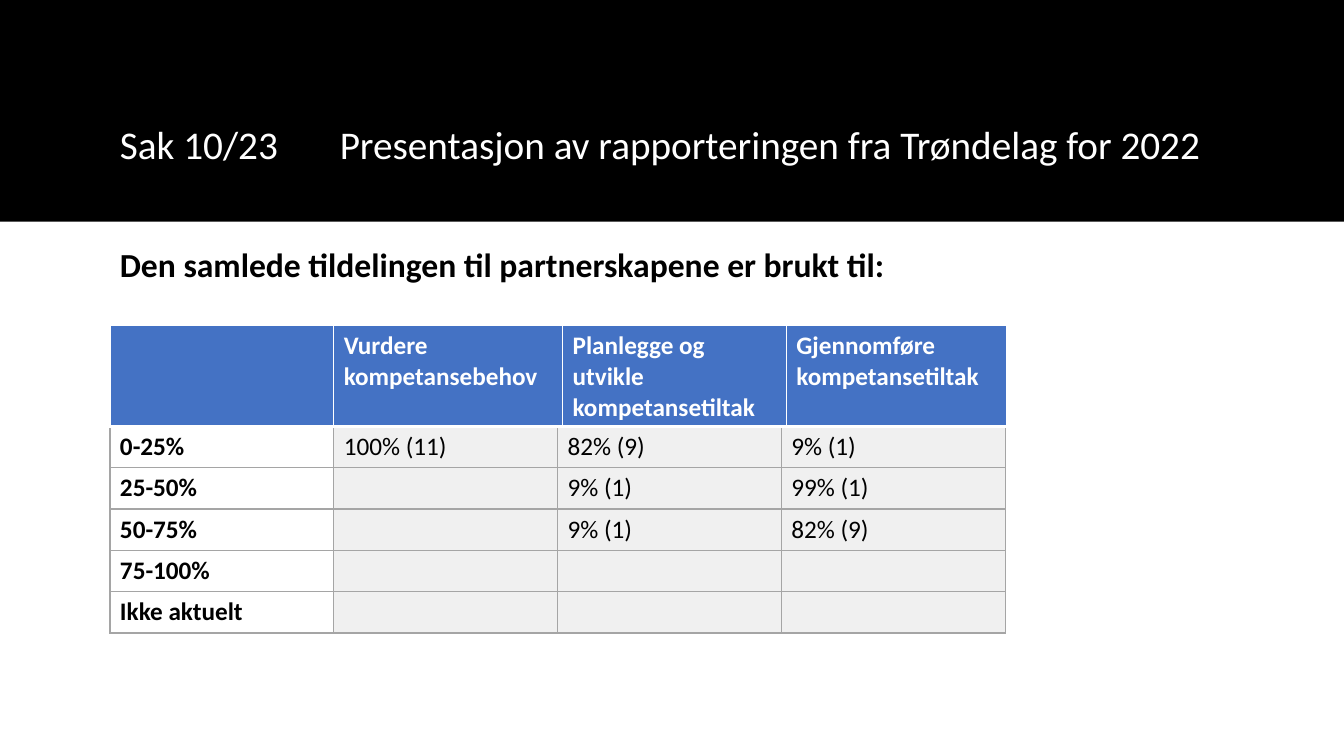
"""Build the slide on how the allocation to the partnerships was used."""
from lxml.etree import SubElement
from pptx import Presentation
from pptx.dml.color import RGBColor
from pptx.enum.shapes import MSO_SHAPE as Shape
from pptx.enum.text import MSO_ANCHOR as Anchor, PP_ALIGN as Align
from pptx.oxml.ns import qn
from pptx.util import Inches, Pt

BLACK = RGBColor(0x00, 0x00, 0x00)
WHITE = RGBColor(0xFF, 0xFF, 0xFF)
BLUE = RGBColor(0x44, 0x72, 0xC4)
PALE = RGBColor(0xF0, 0xF0, 0xF0)
GREY = RGBColor(0xA5, 0xA5, 0xA5)
LEFT = 1.09
ROW_HEIGHT = 0.41


def write(text_frame, text, size, color, bold=False):
    text_frame.text = text
    text_frame.word_wrap = True
    paragraph = text_frame.paragraphs[0]
    paragraph.alignment = Align.LEFT
    font_format = {"name": "Calibri", "size": Pt(size), "bold": bold}
    for run in paragraph.runs:
        for name, value in font_format.items():
            setattr(run.font, name, value)
        run.font.color.rgb = color
    return paragraph


def format_cell(cell, fill, line_color, line_widths):
    properties = cell._tc.get_or_add_tcPr()
    for side, width in zip("LRTB", line_widths):
        line = SubElement(properties, qn(f"a:ln{side}"), w=str(Pt(width)))
        line_fill = SubElement(line, qn("a:solidFill"))
        SubElement(line_fill, qn("a:srgbClr"), val=str(line_color))
    cell.fill.solid()
    cell.fill.fore_color.rgb = fill


presentation = Presentation()
presentation.slide_width = Inches(13.33)
presentation.slide_height = Inches(7.5)
slide = presentation.slides.add_slide(presentation.slide_layouts[5])

band = slide.shapes.add_shape(Shape.RECTANGLE, 0, 0, Inches(13.33), Inches(2.2))
band.shadow.inherit = False
band.fill.solid()
band.fill.fore_color.rgb = BLACK
band.line.fill.background()
slide.shapes._spTree.insert(2, band._element)

title = slide.shapes.title
title_place = {"left": LEFT, "top": 1.11, "width": 11.02, "height": 0.64}
for name, value in title_place.items():
    setattr(title, name, Inches(value))
title.text_frame.vertical_anchor = Anchor.MIDDLE
title_paragraph = write(
    title.text_frame,
    "Sak 10/23\tPresentasjon av rapporteringen fra Trøndelag for 2022",
    28, WHITE)
tab_list = SubElement(title_paragraph._p.get_or_add_pPr(), qn("a:tabLst"))
SubElement(tab_list, qn("a:tab"), pos=str(Inches(2.18)), algn="l")

subtitle = slide.shapes.add_textbox(
    Inches(LEFT), Inches(2.37), Inches(11.33), Inches(0.55))
write(subtitle.text_frame,
      "Den samlede tildelingen til partnerskapene er brukt til:",
      24, BLACK, True)

HEADER_ROWS = [["", "Vurdere kompetansebehov",
                "Planlegge og utvikle kompetansetiltak",
                "Gjennomføre kompetansetiltak"]]
SHARE_ROWS = [
    ["0-25%", "100% (11)", "82% (9)", "9% (1)"],
    ["25-50%", "", "9% (1)", "99% (1)"],
    ["50-75%", "", "9% (1)", "82% (9)"],
    ["75-100%", "", "", ""],
    ["Ikke aktuelt", "", "", ""],
]
TABLES = [
    (SHARE_ROWS, 4.23, ROW_HEIGHT, [2.22] * 4, False),
    (HEADER_ROWS, 3.23, 1, [2.22, 2.27, 2.22, 2.18], True),
]
for rows, top, row_height, widths, is_header in TABLES:
    table = slide.shapes.add_table(
        len(rows), len(widths), Inches(LEFT), Inches(top),
        Inches(sum(widths)), Inches(row_height * len(rows))).table
    table.first_row = table.horz_banding = False
    for column, width in zip(table.columns, widths):
        column.width = Inches(width)
    for row_index, row in enumerate(rows):
        table.rows[row_index].height = Inches(row_height)
        for column_index, text in enumerate(row):
            cell = table.cell(row_index, column_index)
            is_label = column_index == 0
            if is_header:
                format_cell(cell, BLUE, WHITE, (1, 1, 1, 3))
            else:
                format_cell(cell, WHITE if is_label else PALE, GREY, (1, 1, 1, 1))
            write(cell.text_frame, text, 18, WHITE if is_header else BLACK,
                  is_header or is_label)

presentation.save("out.pptx")
